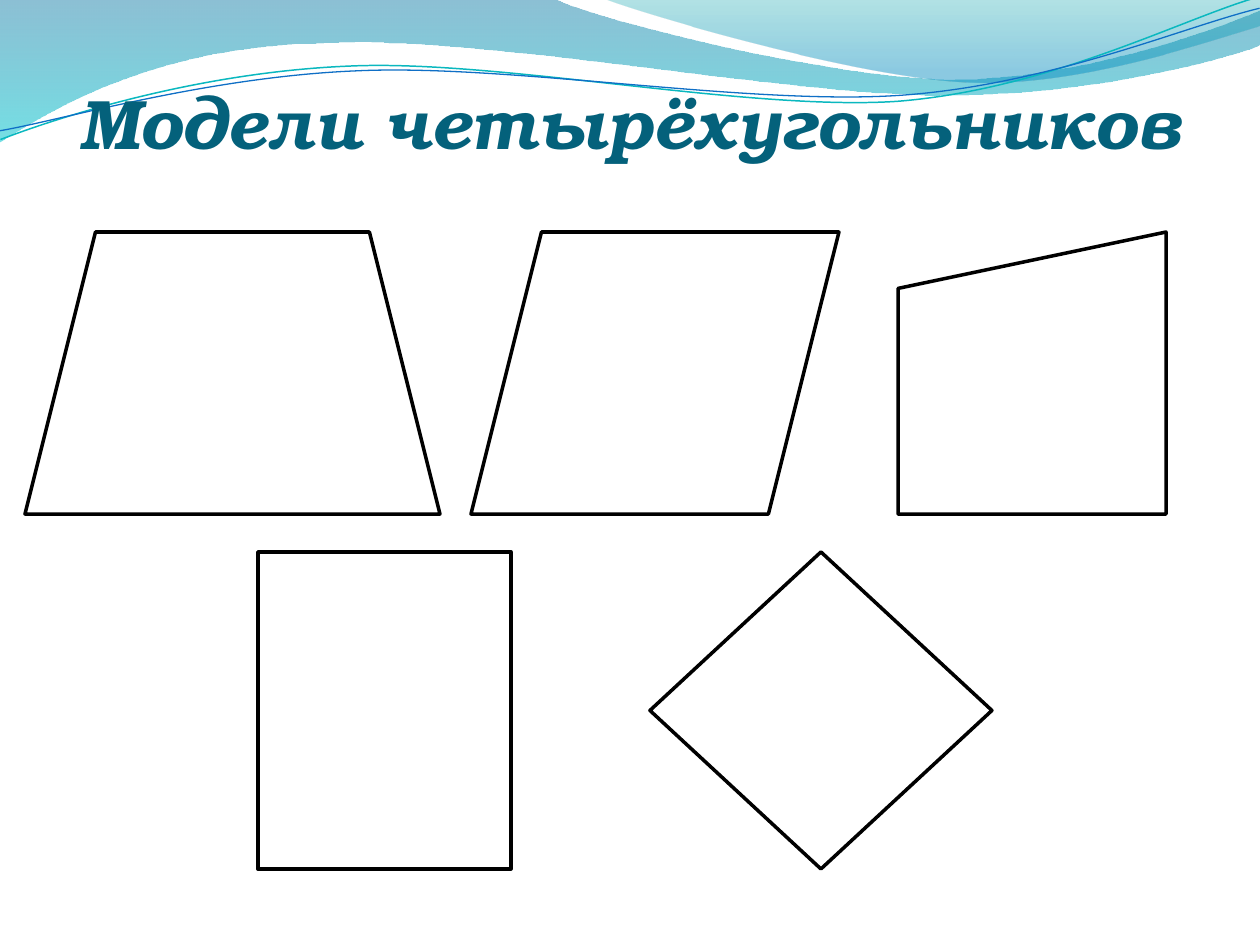
"""Builds a slide with five outlined quadrilaterals under a wavy header."""
from lxml import etree
from pptx import Presentation
from pptx.dml.color import RGBColor
from pptx.enum.shapes import MSO_SHAPE
from pptx.enum.text import MSO_ANCHOR, PP_ALIGN
from pptx.oxml.ns import qn
from pptx.util import Emu, Pt

SCALE = 914400 / 126
TILT = 357.3
TRAPEZOID = MSO_SHAPE.TRAPEZOID
PARALLELOGRAM = MSO_SHAPE.PARALLELOGRAM
MANUAL_INPUT = MSO_SHAPE.FLOWCHART_MANUAL_INPUT
RECTANGLE = MSO_SHAPE.RECTANGLE
DECISION = MSO_SHAPE.FLOWCHART_DECISION
BOTTOM = MSO_ANCHOR.BOTTOM
CENTER = PP_ALIGN.CENTER

WIDE_WAVE = [
    (0, -1), [(554, -1)],
    [(600, 21), (837, 79), (955, 79)], [(1075, 79), (1207, 33), (1260, 11)],
    [(1261, 45)],
    [(1239, 55), (1096, 96), (940, 95)], [(783, 95), (481, 35), (324, 43)],
    [(163, 45), (58, 105), (-1, 142)], [(0, -1)],
]
RIGHT_WAVE = [
    (604, -1),
    [(641, 14), (859, 78), (969, 82)], [(1079, 87), (1211, 40), (1260, 26)],
    [(1260, 0)], [(604, -1)],
]
TEAL_CURVE = [
    (-2, 110),
    [(58, 90), (199, 52), (350, 53)], [(499, 53), (745, 117), (896, 114)],
    [(1049, 109), (1184, 45), (1260, 27)],
]
BLUE_CURVE = [
    (-2, 101),
    [(57, 94), (207, 57), (357, 58)], [(509, 58), (750, 112), (902, 108)],
    [(1052, 104), (1188, 52), (1262, 38)],
]
QUADRILATERALS = [
    (TRAPEZOID, 25, 232, 415, 282),
    (PARALLELOGRAM, 471, 232, 368, 282),
    (MANUAL_INPUT, 898, 232, 268, 282),
    (RECTANGLE, 258, 552, 253, 317),
    (DECISION, 650, 552, 342, 317),
]


def px(length):
    """Turn pixels into EMU."""
    return Emu(round(length * SCALE))


def color(value):
    """Turn a hex string into a colour."""
    return RGBColor.from_string(value)


def add_outline(shapes, outline, close):
    """Add a freeform whose three-point segments are cubic curves."""
    (left, top), *segments = outline
    builder = shapes.build_freeform(px(left), px(top))
    points = [(px(x), px(y)) for segment in segments for x, y in segment]
    builder.add_line_segments(points, close=close)
    shape = builder.convert_to_shape()
    shape.shadow.inherit = False
    lines = iter(list(shape._element.spPr.iter(qn("a:lnTo"))))
    for segment in segments:
        first, *others = [next(lines) for _ in segment]
        if others:
            first.tag = qn("a:cubicBezTo")
        for line in others:
            first.append(line[0])
            line.getparent().remove(line)
    return shape


def add_wave(slide, outline, stops):
    """Add a wave with a translucent gradient running downwards."""
    shape = add_outline(slide.shapes, outline, True)
    shape.line.fill.background()
    shape.fill.gradient()
    shape.fill.gradient_angle = 270
    for stop, (position, value, _) in zip(shape.fill.gradient_stops, stops):
        stop.position = position
        stop.color.rgb = color(value)
    elements = shape._element.spPr.iter(qn("a:srgbClr"))
    for element, (_, _, opacity) in zip(elements, stops):
        etree.SubElement(element, qn("a:alpha")).set("val", str(opacity * 1000))


def set_line(shape, value, width):
    """Leave a shape unfilled and style its line."""
    shape.fill.background()
    shape.line.color.rgb = color(value)
    shape.line.width = Pt(width)


def add_curve(group, outline, value, width):
    """Add a slightly tilted thin curve."""
    shape = add_outline(group.shapes, outline, False)
    shape.rotation = TILT
    set_line(shape, value, width)


def add_title(slide, text):
    """Add the centred slide title."""
    box = slide.shapes.add_textbox(px(15), px(6), px(1230), px(157))
    frame = box.text_frame
    frame.word_wrap = True
    frame.vertical_anchor = BOTTOM
    frame.margin_left = frame.margin_right = frame.margin_bottom = 0
    frame.margin_top = px(6)
    paragraph = frame.paragraphs[0]
    paragraph.alignment = CENTER
    run = paragraph.add_run()
    run.text = text
    run.font.name = "TeX Gyre Bonum"
    run.font.size = Pt(40)
    run.font.bold = run.font.italic = True
    run.font.color.rgb = color("04617B")


def add_quadrilateral(slide, kind, left, top, width, height):
    """Add one outlined quadrilateral."""
    shape = slide.shapes.add_shape(kind, px(left), px(top), px(width), px(height))
    shape.shadow.inherit = False
    set_line(shape, "000000", 2)


def main():
    """Build and save the slide."""
    presentation = Presentation()
    presentation.slide_width, presentation.slide_height = px(1260), px(945)
    slide = presentation.slides.add_slide(presentation.slide_layouts[6])
    add_wave(slide, WIDE_WAVE, [(0, "0074A1", 45), (1, "00C6CF", 55)])
    add_wave(slide, RIGHT_WAVE, [(0, "00A1A9", 30), (0.8, "008BBF", 45)])
    curves = slide.shapes.add_group_shape()
    add_curve(curves, TEAL_CURVE, "0AB8BF", 0.85)
    add_curve(curves, BLUE_CURVE, "0F6FC6", 0.75)
    add_title(slide, "Модели четырёхугольников")
    for quadrilateral in QUADRILATERALS:
        add_quadrilateral(slide, *quadrilateral)
    presentation.save("out.pptx")


if __name__ == "__main__":
    main()
